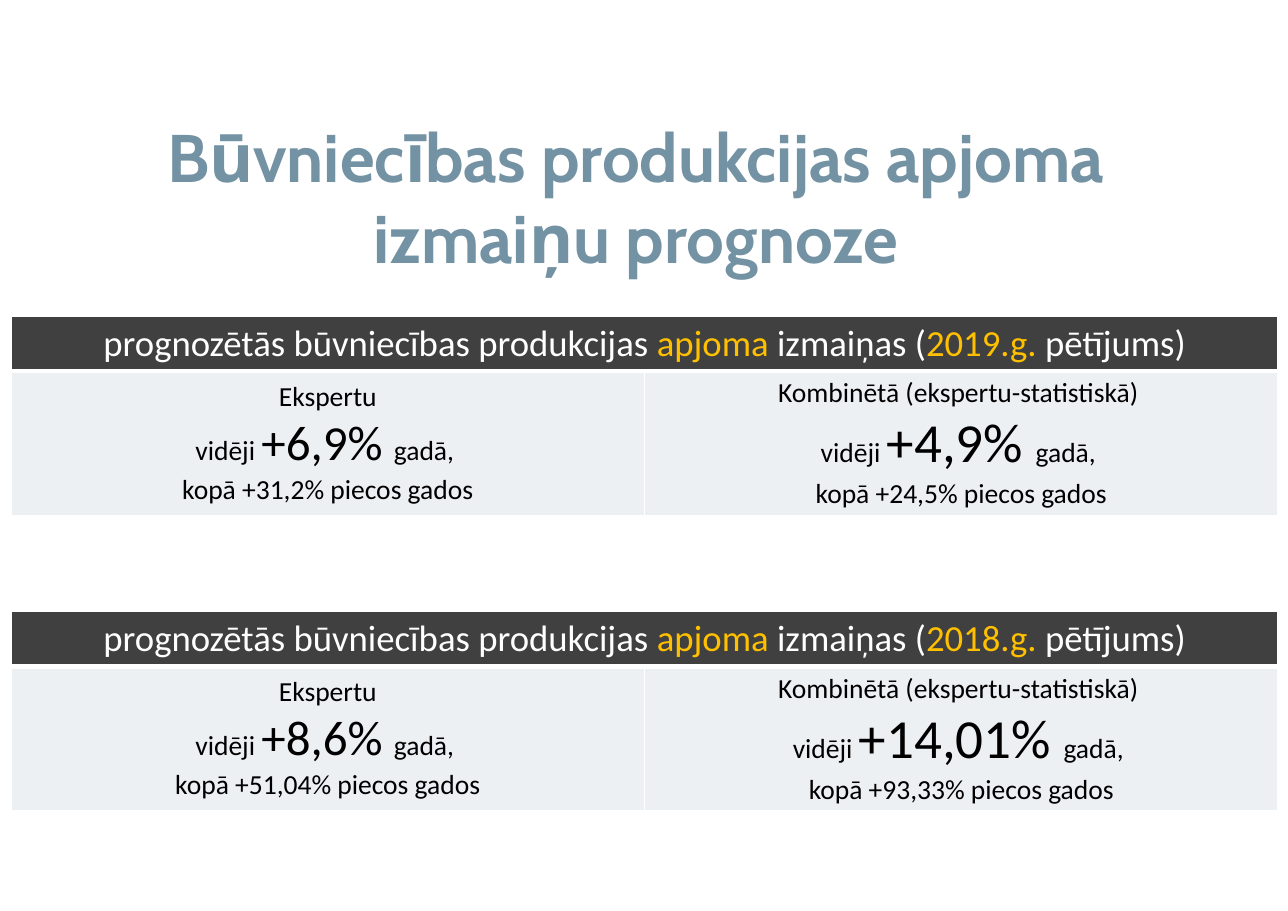
from dataclasses import dataclass

from lxml import etree
from pptx import Presentation
from pptx.dml.color import RGBColor
from pptx.enum.text import MSO_ANCHOR, PP_ALIGN
from pptx.oxml.ns import qn
from pptx.util import Inches, Pt

CENTER = PP_ALIGN.CENTER
MIDDLE = MSO_ANCHOR.MIDDLE
TOP = MSO_ANCHOR.TOP

PAGE_WIDTH = Inches(11.69)
PAGE_HEIGHT = Inches(8.27)

BLUE_GREY = RGBColor(0x73, 0x92, 0xA3)
DARK = RGBColor(0x40, 0x40, 0x40)
PALE = RGBColor(0xED, 0xF0, 0xF3)
GOLD = RGBColor(0xFF, 0xC0, 0x00)
WHITE = RGBColor(0xFF, 0xFF, 0xFF)
BLACK = RGBColor(0x00, 0x00, 0x00)


@dataclass
class Span:
    text: str
    size: int
    color: RGBColor = BLACK
    font: str = "Calibri"
    bold: bool = False


@dataclass
class Forecast:
    method: str
    yearly: str
    total: str
    yearly_size: int

    def lines(self) -> list[list[Span]]:
        return [
            [Span(self.method, 18)],
            [Span("vidēji ", 18), Span(f"{self.yearly} ", self.yearly_size), Span("gadā, ", 18)],
            [Span(f"kopā {self.total} piecos gados", 18)],
        ]


@dataclass
class Study:
    year: str
    top: float
    forecasts: list[Forecast]

    def heading(self) -> list[Span]:
        return [
            Span("prognozētās būvniecības produkcijas ", 24, WHITE),
            Span("apjoma", 24, GOLD),
            Span(" izmaiņas (", 24, WHITE),
            Span(f"{self.year}.g.", 24, GOLD),
            Span(" pētījums)", 24, WHITE),
        ]


EXPERT = "Ekspertu"
COMBINED = "Kombinētā (ekspertu-statistiskā) "
STUDIES = [
    Study("2019", 34.7, [Forecast(EXPERT, "+6,9%", "+31,2%", 32),
                         Forecast(COMBINED, "+4,9%", "+24,5%", 36)]),
    Study("2018", 67.11, [Forecast(EXPERT, "+8,6%", "+51,04%", 32),
                          Forecast(COMBINED, "+14,01%", "+93,33%", 36)]),
]


def across(percent: float) -> int:
    return round(PAGE_WIDTH * percent / 100)


def down(percent: float) -> int:
    return round(PAGE_HEIGHT * percent / 100)


def write_lines(frame, lines: list[list[Span]]) -> None:
    frame.text = "\n".join("" for _ in lines)
    for para, spans in zip(frame.paragraphs, lines):
        para.alignment = CENTER
        for span in spans:
            run = para.add_run()
            run.text = span.text
            run.font.size = Pt(span.size)
            run.font.name = span.font
            run.font.bold = span.bold
            run.font.color.rgb = span.color


def add_borders(cell, bottom_width: int) -> None:
    properties = cell._tc.get_or_add_tcPr()
    for side, width in (("L", 1), ("R", 1), ("T", 1), ("B", bottom_width)):
        line = etree.SubElement(properties, qn(f"a:ln{side}"), w=str(Pt(width)))
        fill = etree.SubElement(line, qn("a:solidFill"))
        etree.SubElement(fill, qn("a:srgbClr"), val=str(WHITE))


def fill_cell(cell, lines: list[list[Span]], color: RGBColor, anchor, bottom_width: int) -> None:
    write_lines(cell.text_frame, lines)
    cell.vertical_anchor = anchor
    add_borders(cell, bottom_width)
    cell.fill.solid()
    cell.fill.fore_color.rgb = color


def add_title(page, text: str) -> None:
    box = page.shapes.add_textbox(across(6.24), down(11.85), across(86.31), down(19.35))
    frame = box.text_frame
    frame.word_wrap = True
    frame.vertical_anchor = MIDDLE
    write_lines(frame, [[Span(text, 44, BLUE_GREY, "Cabin", True)]])


def add_study(page, study: Study) -> None:
    row_heights = [down(6.05), down(15.84)]
    table = page.shapes.add_table(2, 2, across(0.86), down(study.top),
                                  across(98.38), sum(row_heights)).table
    table.horz_banding = False
    for row, height in zip(table.rows, row_heights):
        row.height = height

    # Heading across both columns
    heading = table.cell(0, 0)
    heading.merge(table.cell(0, 1))
    fill_cell(heading, [study.heading()], DARK, TOP, 3)

    # One forecast per column
    for column, forecast in enumerate(study.forecasts):
        fill_cell(table.cell(1, column), forecast.lines(), PALE, MIDDLE, 1)


def main() -> None:
    deck = Presentation()
    deck.slide_width = PAGE_WIDTH
    deck.slide_height = PAGE_HEIGHT
    page = deck.slides.add_slide(deck.slide_layouts[6])
    add_title(page, "Būvniecības produkcijas apjoma izmaiņu prognoze")
    for study in STUDIES:
        add_study(page, study)
    deck.save("out.pptx")


if __name__ == "__main__":
    main()
